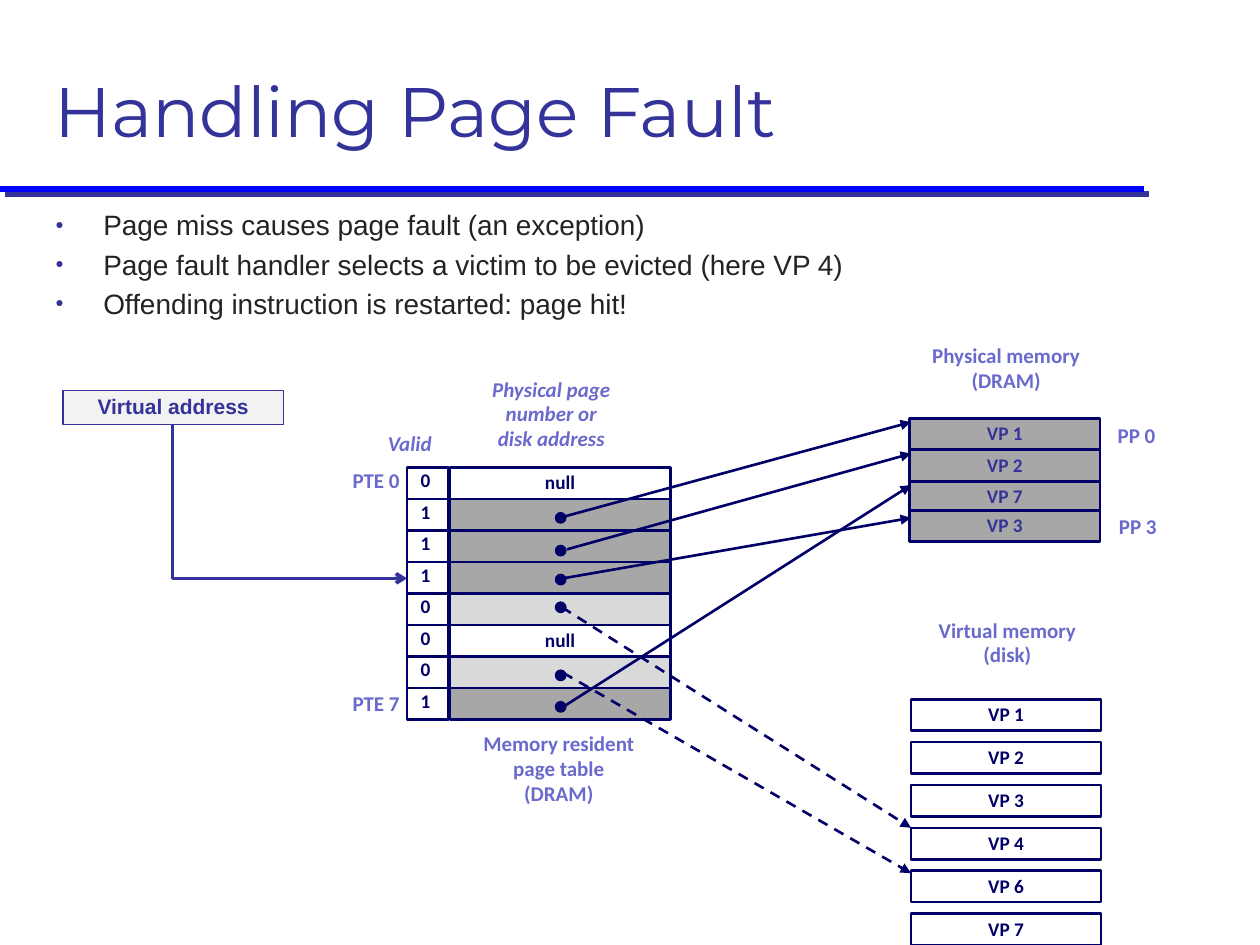
from typing import NamedTuple

from lxml.etree import SubElement
from pptx import Presentation
from pptx.dml.color import RGBColor
from pptx.enum.dml import MSO_LINE
from pptx.enum.shapes import MSO_CONNECTOR, MSO_SHAPE
from pptx.enum.text import MSO_ANCHOR, MSO_AUTO_SIZE, PP_ALIGN
from pptx.oxml.ns import qn
from pptx.util import Pt

PX = 9144  # 100 px to the inch
NAVY, BLUE, LILAC = "000066", "333399", "6A6ACD"
WHITE, GREY, PALE = "FFFFFF", "A7A7A7", "D9D9D9"
LEFT, MID, RIGHT = PP_ALIGN.LEFT, PP_ALIGN.CENTER, PP_ALIGN.RIGHT
TOP, CENTRE = MSO_ANCHOR.TOP, MSO_ANCHOR.MIDDLE


class Box(NamedTuple):
    x: int
    y: int
    w: int
    h: int


class Font(NamedTuple):
    color: str
    size: int = 11
    name: str = "Calibri"
    bold: bool = True
    italic: bool = False


class Label(NamedTuple):
    box: Box
    lines: list[str]
    font: Font
    align: PP_ALIGN = MID
    anchor: MSO_ANCHOR = TOP


class Row(NamedTuple):
    valid: str
    fill: str
    text: str = ""


class Arrow(NamedTuple):
    start: tuple[int, int]
    end: tuple[int, int]
    dash: bool = False


def paint(color: str) -> RGBColor:
    return RGBColor.from_string(color)


def put(item, values: dict) -> None:
    for key, value in values.items():
        setattr(item, key, value)


def scale(box: tuple) -> list[int]:
    return [n * PX for n in box]


def place(item, box: Box) -> None:
    put(item, dict(zip(("left", "top", "width", "height"), scale(box))))


def node(parent, tag: str, **attrs: str):
    return SubElement(parent, qn(tag), attrs)


def write(frame, lines: list[str], font: Font, form: dict) -> None:
    """Fill a text frame, one paragraph a line."""
    frame.text = "\n".join(lines)
    for para in frame.paragraphs:
        put(para, form)
        for run in para.runs:
            put(run.font, {"size": Pt(font.size), "name": font.name,
                           "bold": font.bold, "italic": font.italic})
            run.font.color.rgb = paint(font.color)


def draw(slide, box: Box, fill: str = "", text: str = "", font: Font = Font(NAVY),
         kind=MSO_SHAPE.RECTANGLE, edge: str = NAVY, width: float = 1.5) -> None:
    shape = slide.shapes.add_shape(kind, *scale(box))
    shape.shadow.inherit = False
    if fill:
        shape.fill.solid()
        shape.fill.fore_color.rgb = paint(fill)
    else:
        shape.fill.background()
    shape.line.color.rgb = paint(edge)
    shape.line.width = Pt(width)
    if text:
        put(shape.text_frame, {"word_wrap": False, "vertical_anchor": CENTRE})
        write(shape.text_frame, [text], font, {"alignment": MID, "line_spacing": 0.98})


def label(slide, item: Label) -> None:
    frame = slide.shapes.add_textbox(*scale(item.box)).text_frame
    put(frame, {"word_wrap": False, "vertical_anchor": item.anchor,
                "auto_size": MSO_AUTO_SIZE.SHAPE_TO_FIT_TEXT})
    write(frame, item.lines, item.font, {"alignment": item.align, "line_spacing": 0.98})


def link(slide, item: Arrow, color: str = NAVY, width: float = 1.5,
         head: str = "triangle", kind=MSO_CONNECTOR.STRAIGHT):
    """Add a connector; return it with its empty effect list."""
    line = slide.shapes.add_connector(kind, *scale(item.start + item.end))
    line.line.color.rgb = paint(color)
    line.line.width = Pt(width)
    if item.dash:
        line.line.dash_style = MSO_LINE.DASH
    if head:
        node(line.line._get_or_add_ln(), "a:tailEnd", type=head)
    return line, node(line._element.spPr, "a:effectLst")


def rule(slide) -> None:
    _, effects = link(slide, Arrow((0, 150), (908, 150)), "0000FF", 3.5, "")
    shade = node(effects, "a:outerShdw", dist="53340", dir="2700000",
                 algn="ctr", rotWithShape="0")
    node(shade, "a:srgbClr", val=BLUE)


def elbow(slide) -> None:
    """Run down from the virtual address, then right to its table row."""
    line, _ = link(slide, Arrow((291, 305), (169, 491)), BLUE, 2, "arrow",
                   MSO_CONNECTOR.ELBOW)
    props = line._element.spPr
    props.find(qn("a:prstGeom")).set("prst", "bentConnector2")
    props.find(qn("a:xfrm")).set("rot", "16200000")


def heading(slide) -> None:
    title, body = slide.shapes.title, slide.placeholders[1]
    place(title, Box(33, 39, 906, 86))
    place(body, Box(34, 160, 909, 83))
    put(title.text_frame, {"vertical_anchor": MSO_ANCHOR.BOTTOM,
                           "auto_size": MSO_AUTO_SIZE.NONE})
    put(body.text_frame, {"vertical_anchor": TOP, "auto_size": MSO_AUTO_SIZE.NONE})
    write(title.text_frame, ["Handling Page Fault"],
          Font(BLUE, 40, "Montserrat", False), {"alignment": LEFT})
    write(body.text_frame, POINTS, Font("232323", 16, "Arial", False),
          {"alignment": LEFT, "space_before": Pt(3.2), "line_spacing": 1.0})
    for para in body.text_frame.paragraphs:
        props = para._p.get_or_add_pPr()
        put_off = str(38 * PX)
        props.set("marL", put_off)
        props.set("indent", "-" + put_off)
        node(node(props, "a:buClr"), "a:srgbClr", val=BLUE)
        node(props, "a:buSzPct", val="50000")
        node(props, "a:buFont", typeface="Arial")
        node(props, "a:buChar", char="●")


POINTS = ["Page miss causes page fault (an exception)",
          "Page fault handler selects a victim to be evicted (here VP 4)",
          "Offending instruction is restarted: page hit!"]
TABLE = [Row("0", WHITE, "null"), Row("1", GREY), Row("1", GREY), Row("1", GREY),
         Row("0", PALE), Row("0", WHITE, "null"), Row("0", PALE), Row("1", GREY)]
MEMORY = {"VP 1": 332, "VP 2": 357, "VP 7": 382, "VP 3": 405}
DISK = ["VP 1", "VP 2", "VP 3", "VP 4", "VP 6", "VP 7"]
DOTS = [407, 433, 456, 478, 532, 557]
ARROWS = [Arrow((444, 411), (723, 335)), Arrow((450, 436), (723, 360)),
          Arrow((447, 459), (723, 411)), Arrow((446, 482), (723, 657), True),
          Arrow((447, 534), (723, 693), True), Arrow((447, 561), (723, 385))]
NOTE, SLANT = Font(LILAC, 12), Font(LILAC, 12, italic=True)
LABELS = [
    Label(Box(373, 576, 141, 70), ["Memory resident", "page table", "(DRAM)"], NOTE),
    Label(Box(729, 268, 139, 50), ["Physical memory", "(DRAM)"], NOTE),
    Label(Box(734, 486, 131, 50), ["Virtual memory", "(disk)"], NOTE),
    Label(Box(298, 338, 56, 30), ["Valid"], SLANT, LEFT),
    Label(Box(378, 294, 119, 70), ["Physical page", "number or", "disk address"],
          SLANT, MID, CENTRE),
    Label(Box(269, 367, 58, 30), ["PTE 0"], NOTE, RIGHT, CENTRE),
    Label(Box(269, 544, 58, 30), ["PTE 7"], NOTE, RIGHT, CENTRE),
    Label(Box(877, 331, 50, 30), ["PP 0"], NOTE, MID, CENTRE),
    Label(Box(878, 403, 50, 30), ["PP 3"], NOTE, MID, CENTRE)]


def main() -> None:
    deck = Presentation()
    put(deck, {"slide_width": 1000 * PX, "slide_height": 750 * PX})
    slide = deck.slides.add_slide(deck.slide_layouts[1])
    heading(slide)
    rule(slide)
    for i, row in enumerate(TABLE):
        y = 371 + 25 * i
        draw(slide, Box(357, y, 175, 25), row.fill, row.text)
        draw(slide, Box(323, y, 33, 25))
        label(slide, Label(Box(324, y - 3, 28, 28), [row.valid], Font(NAVY), LEFT))
    for name, y in MEMORY.items():
        draw(slide, Box(722, y, 151, 25), GREY, name, Font(BLUE))
    for i, name in enumerate(DISK):
        draw(slide, Box(723, 555 + 34 * i, 151, 25), WHITE, name)
    for item in LABELS:
        label(slide, item)
    for item in ARROWS:
        link(slide, item)
    for y in DOTS:
        draw(slide, Box(441, y, 8, 8), NAVY, kind=MSO_SHAPE.OVAL, width=1)
    draw(slide, Box(50, 310, 175, 27), "F2F2F2", "Virtual address",
         Font(BLUE, 12, "Arial"), edge=BLUE, width=1)
    elbow(slide)
    deck.save("out.pptx")


if __name__ == "__main__":
    main()
